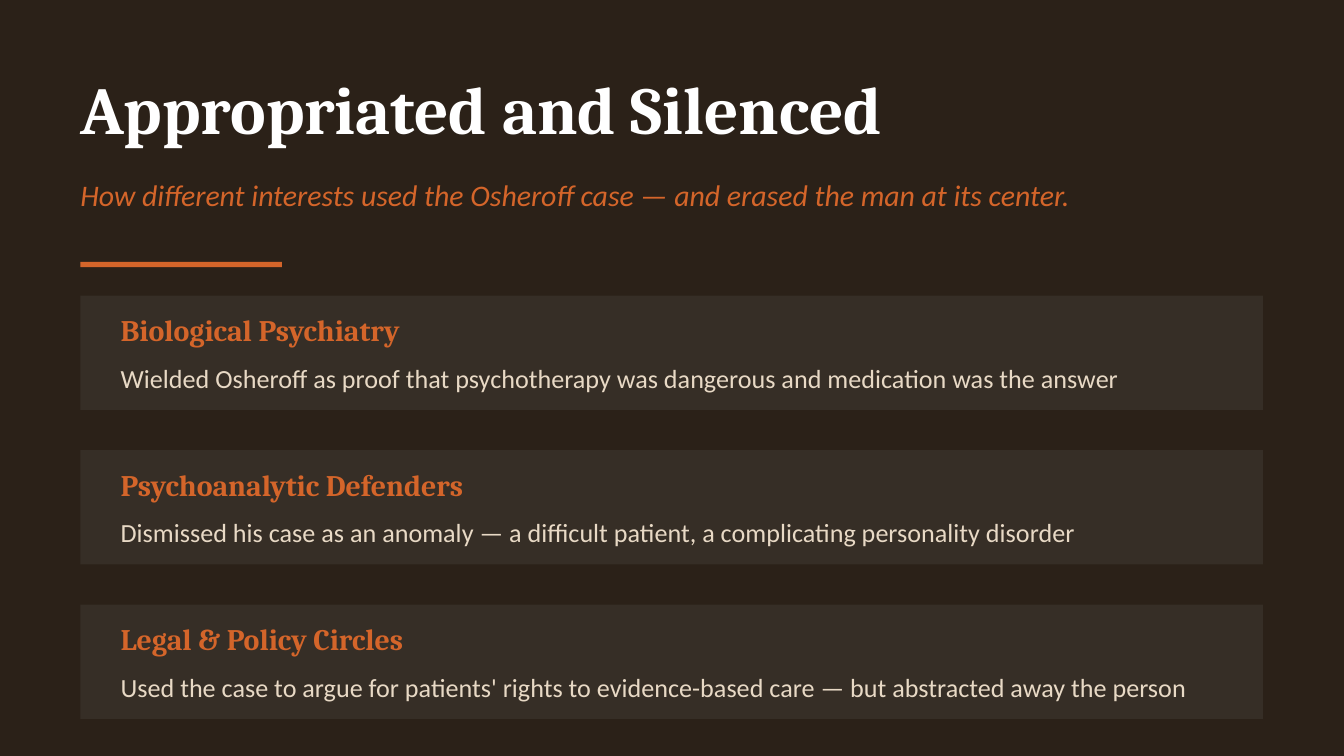
import dataclasses

import pptx
import pptx.dml.color
import pptx.enum.shapes
import pptx.enum.text
import pptx.util
from pptx.util import Cm

BACKGROUND = "2B2118"
CARD_FILL = "362E26"
ACCENT = "D4652A"
WHITE = "FFFFFF"
SAND = "E8D9C5"

MARGIN = 1.52
CARD_TOP = 5.59
CARD_PITCH = 2.92
CARD_PADDING = 0.76


@dataclasses.dataclass(frozen=True)
class TextStyle:
    font: str
    size: int
    color: str
    bold: bool = False
    italic: bool = False


@dataclasses.dataclass(frozen=True)
class Card:
    heading: str
    description: str


TITLE = TextStyle("Cambria", 36, WHITE, bold=True)
SUBTITLE = TextStyle("Calibri", 16, ACCENT, italic=True)
HEADING = TextStyle("Cambria", 16, ACCENT, bold=True)
DESCRIPTION = TextStyle("Calibri", 14, SAND)

CARDS = [
    Card("Biological Psychiatry",
         "Wielded Osheroff as proof that psychotherapy was dangerous and medication was the answer"),
    Card("Psychoanalytic Defenders",
         "Dismissed his case as an anomaly — a difficult patient, a complicating personality disorder"),
    Card("Legal & Policy Circles",
         "Used the case to argue for patients' rights to evidence-based care — but abstracted away the person"),
]


def set_color(color_fill, color: str) -> None:
    color_fill.solid()
    color_fill.fore_color.rgb = pptx.dml.color.RGBColor.from_string(color)


def write_text(shape, text: str, style: TextStyle) -> None:
    frame = shape.text_frame
    frame.word_wrap = True
    frame.auto_size = pptx.enum.text.MSO_AUTO_SIZE.NONE
    frame.vertical_anchor = pptx.enum.text.MSO_ANCHOR.MIDDLE
    frame.margin_left = frame.margin_right = frame.margin_top = frame.margin_bottom = 0
    paragraph = frame.paragraphs[0]
    paragraph.alignment = pptx.enum.text.PP_ALIGN.LEFT
    run = paragraph.add_run()
    run.text = text
    run.font.name = style.font
    run.font.size = pptx.util.Pt(style.size)
    run.font.bold = style.bold
    run.font.italic = style.italic
    set_color(run.font.fill, style.color)


def add_text(slide, left: float, top: float, width: float, height: float,
             text: str, style: TextStyle) -> None:
    shape = slide.shapes.add_textbox(Cm(left), Cm(top), Cm(width), Cm(height))
    write_text(shape, text, style)


def add_rectangle(slide, left: float, top: float, width: float, height: float, color: str) -> None:
    shape = slide.shapes.add_shape(pptx.enum.shapes.MSO_SHAPE.RECTANGLE,
                                   Cm(left), Cm(top), Cm(width), Cm(height))
    shape.shadow.inherit = False
    set_color(shape.fill, color)
    shape.line.fill.background()


def add_card(slide, top: float, card: Card) -> None:
    left = MARGIN + CARD_PADDING
    add_rectangle(slide, MARGIN, top, 22.35, 2.16, CARD_FILL)
    add_text(slide, left, top + 0.2, 7.62, 0.89, card.heading, HEADING)
    add_text(slide, left, top + 1.07, 20.83, 0.97, card.description, DESCRIPTION)


def main() -> None:
    presentation = pptx.Presentation()
    presentation.slide_width = Cm(25.4)
    presentation.slide_height = Cm(14.29)
    slide = presentation.slides.add_slide(presentation.slide_layouts.get_by_name("Title Only"))
    set_color(slide.background.fill, BACKGROUND)

    # Title, subtitle and accent rule
    title = slide.shapes.title
    title.left, title.top, title.width, title.height = Cm(MARGIN), Cm(1.02), Cm(22.86), Cm(2.03)
    write_text(title, "Appropriated and Silenced", TITLE)
    add_text(slide, MARGIN, 3.05, 21.59, 1.27,
             "How different interests used the Osheroff case — and erased the man at its center.",
             SUBTITLE)
    add_rectangle(slide, MARGIN, 4.95, 3.81, 0.1, ACCENT)

    # One card per interest group
    for index, card in enumerate(CARDS):
        add_card(slide, CARD_TOP + index * CARD_PITCH, card)

    presentation.save("out.pptx")


if __name__ == "__main__":
    main()
